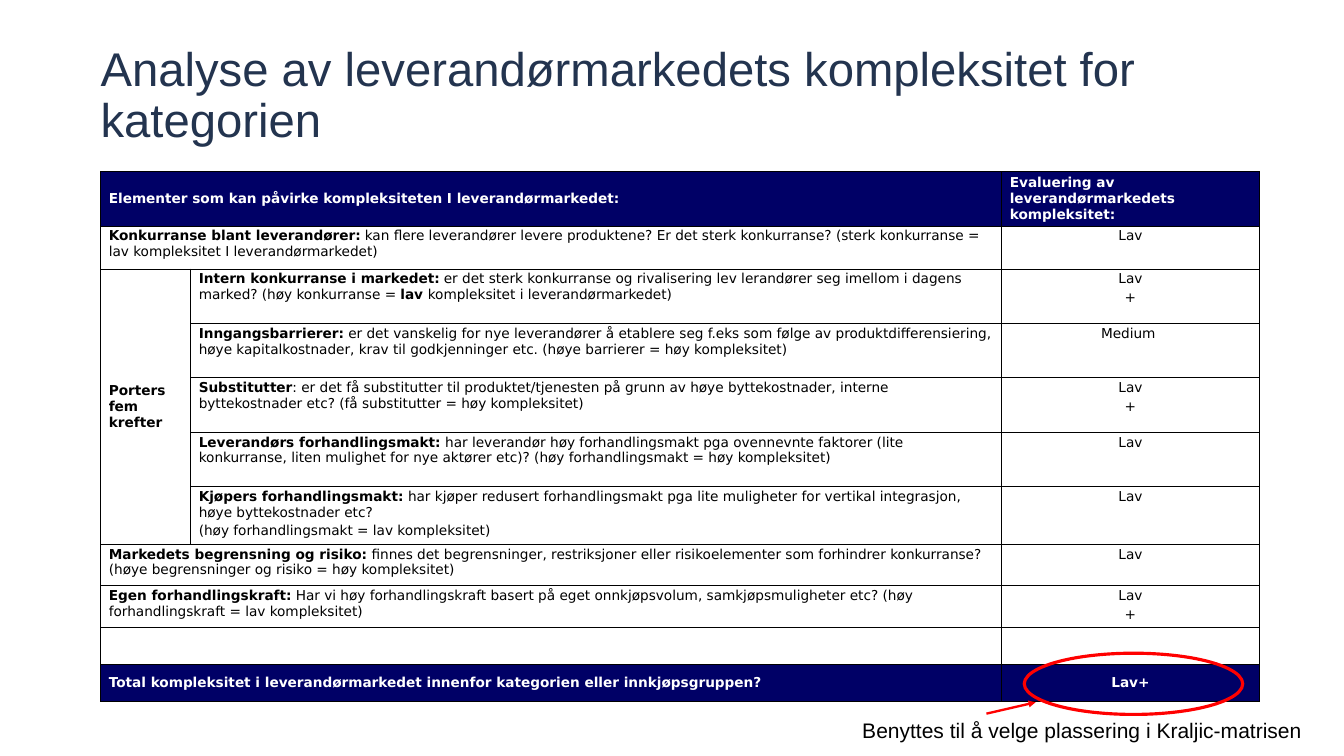
from pptx import Presentation
from pptx.dml.color import RGBColor
from pptx.enum.shapes import MSO_CONNECTOR, MSO_SHAPE
from pptx.enum.text import MSO_ANCHOR, MSO_AUTO_SIZE, PP_ALIGN
from pptx.oxml.ns import qn
from pptx.util import Inches, Pt
from lxml.etree import SubElement

HUES = {"title": "23344F", "navy": "000066", "white": "FFFFFF",
        "black": "000000", "red": "FF0000"}


def color(name):
    return RGBColor.from_string(HUES[name])


def border(cell):
    props = cell._tc.get_or_add_tcPr()
    for side in ("a:lnL", "a:lnR", "a:lnT", "a:lnB"):
        line = SubElement(props, qn(side), w=str(Pt(1)))
        fill = SubElement(line, qn("a:solidFill"))
        SubElement(fill, qn("a:srgbClr"), val=HUES["black"])


deck = Presentation()
deck.slide_width = Inches(17.78)
deck.slide_height = Inches(10)
slide = deck.slides.add_slide(deck.slide_layouts[5])

title = slide.shapes.title
title.left, title.top = Inches(1.33), Inches(1.11)
title.width, title.height = Inches(15.11), Inches(0.84)
frame = title.text_frame
frame.text = "Analyse av leverandørmarkedets kompleksitet for kategorien"
frame.word_wrap = True
frame.auto_size = MSO_AUTO_SIZE.NONE
frame.vertical_anchor = MSO_ANCHOR.BOTTOM
frame.margin_left = frame.margin_right = 0
frame.margin_top = frame.margin_bottom = 0
para = frame.paragraphs[0]
para.alignment = PP_ALIGN.LEFT
para.line_spacing = 0.9
font = para.runs[0].font
font.name, font.size = "Arial", Pt(45)
font.color.rgb = color("title")

# Asterisks switch bold on and off; each row is height, side label, element, rating.
ROWS = [
    (0.72, "", "*Elementer som kan påvirke kompleksiteten I leverandørmarkedet:*",
     "*Evaluering av leverandørmarkedets kompleksitet:*"),
    (0.57, "", "*Konkurranse blant leverandører:* kan flere leverandører levere produktene? "
     "Er det sterk konkurranse? (sterk konkurranse = lav kompleksitet I leverandørmarkedet)", "Lav"),
    (0.72, "*Porters fem krefter*", "*Intern konkurranse i markedet:* er det sterk konkurranse "
     "og rivalisering lev lerandører seg imellom i dagens marked? "
     "(høy konkurranse = *lav *kompleksitet i leverandørmarkedet)", "Lav\n+"),
    (0.72, "", "*Inngangsbarrierer:* er det vanskelig for nye leverandører å etablere seg f.eks "
     "som følge av produktdifferensiering, høye kapitalkostnader, krav til godkjenninger etc. "
     "(høye barrierer = høy kompleksitet)", "Medium "),
    (0.72, "", "*Substitutter*: er det få substitutter til produktet/tjenesten på grunn av høye "
     "byttekostnader, interne byttekostnader etc? (få substitutter = høy kompleksitet)", "Lav\n+"),
    (0.72, "", "*Leverandørs forhandlingsmakt: *har leverandør høy forhandlingsmakt pga "
     "ovennevnte faktorer (lite konkurranse, liten mulighet for nye aktører etc)? "
     "(høy forhandlingsmakt = høy kompleksitet)", "Lav"),
    (0.76, "", "*Kjøpers forhandlingsmakt: *har kjøper redusert forhandlingsmakt pga lite "
     "muligheter for vertikal integrasjon, høye byttekostnader etc?\n"
     "(høy forhandlingsmakt = lav kompleksitet)", "Lav"),
    (0.55, "", "*Markedets begrensning og risiko: *finnes det begrensninger, restriksjoner eller "
     "risikoelementer som forhindrer konkurranse? "
     "(høye begrensninger og risiko = høy kompleksitet)", "Lav"),
    (0.55, "", "*Egen forhandlingskraft:* Har vi høy forhandlingskraft basert på eget "
     "onnkjøpsvolum, samkjøpsmuligheter etc? (høy forhandlingskraft = lav kompleksitet)", "Lav\n+"),
    (0.49, "", "", ""),
    (0.49, "", "*Total kompleksitet i leverandørmarkedet innenfor kategorien eller "
     "innkjøpsgruppen?*", "*Lav+*"),
]
FORCES = range(2, 7)
BANDS = (0, len(ROWS) - 1)

table = slide.shapes.add_table(len(ROWS), 3, Inches(1.33), Inches(2.27),
                               Inches(15.33), Inches(7.02)).table
for col, width in zip(table.columns, (1.19, 10.73, 3.41)):
    col.width = Inches(width)

for r, (height, *texts) in enumerate(ROWS):
    table.rows[r].height = Inches(height)
    if r not in FORCES:
        texts = [texts[1], "", texts[2]]
    for c, text in enumerate(texts):
        cell = table.cell(r, c)
        border(cell)
        if r in BANDS:
            cell.fill.solid()
            cell.fill.fore_color.rgb = color("navy")
        else:
            cell.fill.background()
        cell.margin_left = cell.margin_right = Inches(0.11)
        cell.margin_top = cell.margin_bottom = Inches(0.03)
        side = c == 0 and r in FORCES
        cell.vertical_anchor = MSO_ANCHOR.MIDDLE if r in BANDS or side else MSO_ANCHOR.TOP
        cell.text_frame.text = text
        for n, para in enumerate(cell.text_frame.paragraphs):
            parts = para.text.split("*")
            para.text = ""
            para.alignment = PP_ALIGN.CENTER if c == 2 and r > 0 else PP_ALIGN.LEFT
            para.space_before = Pt(1.3 if n else 0)
            para.space_after = Pt(1.3 if r else 0)
            for k, part in enumerate(parts):
                if part:
                    run = para.add_run()
                    run.text = part
                    run.font.name, run.font.size = "DejaVu Sans", Pt(13)
                    run.font.bold = k % 2 == 1
                    run.font.color.rgb = color("white" if r in BANDS else "black")

for r in range(len(ROWS)):
    if r not in FORCES:
        table.cell(r, 0).merge(table.cell(r, 1))
table.cell(FORCES[0], 0).merge(table.cell(FORCES[-1], 0))

ring = slide.shapes.add_shape(MSO_SHAPE.OVAL, Inches(13.55), Inches(8.64),
                              Inches(2.89), Inches(0.81))
ring.shadow.inherit = False
ring.fill.background()
ring.line.color.rgb = color("red")
ring.line.width = Pt(3)

note = slide.shapes.add_textbox(Inches(10.86), Inches(9.44), Inches(6.91), Inches(0.44))
frame = note.text_frame
frame.word_wrap = True
frame.auto_size = MSO_AUTO_SIZE.SHAPE_TO_FIT_TEXT
frame.text = "Benyttes til å velge plassering i Kraljic-matrisen"
para = frame.paragraphs[0]
para.alignment = PP_ALIGN.CENTER
font = para.runs[0].font
font.name, font.size = "Arial", Pt(20)
font.color.rgb = color("black")

arrow = slide.shapes.add_connector(MSO_CONNECTOR.STRAIGHT, Inches(13.05), Inches(9.44),
                                   Inches(13.7), Inches(9.29))
arrow.line.color.rgb = color("red")
arrow.line.width = Pt(2.25)
SubElement(arrow.line._get_or_add_ln(), qn("a:tailEnd"), type="triangle")
SubElement(arrow._element.spPr, qn("a:effectLst"))

deck.save("out.pptx")
